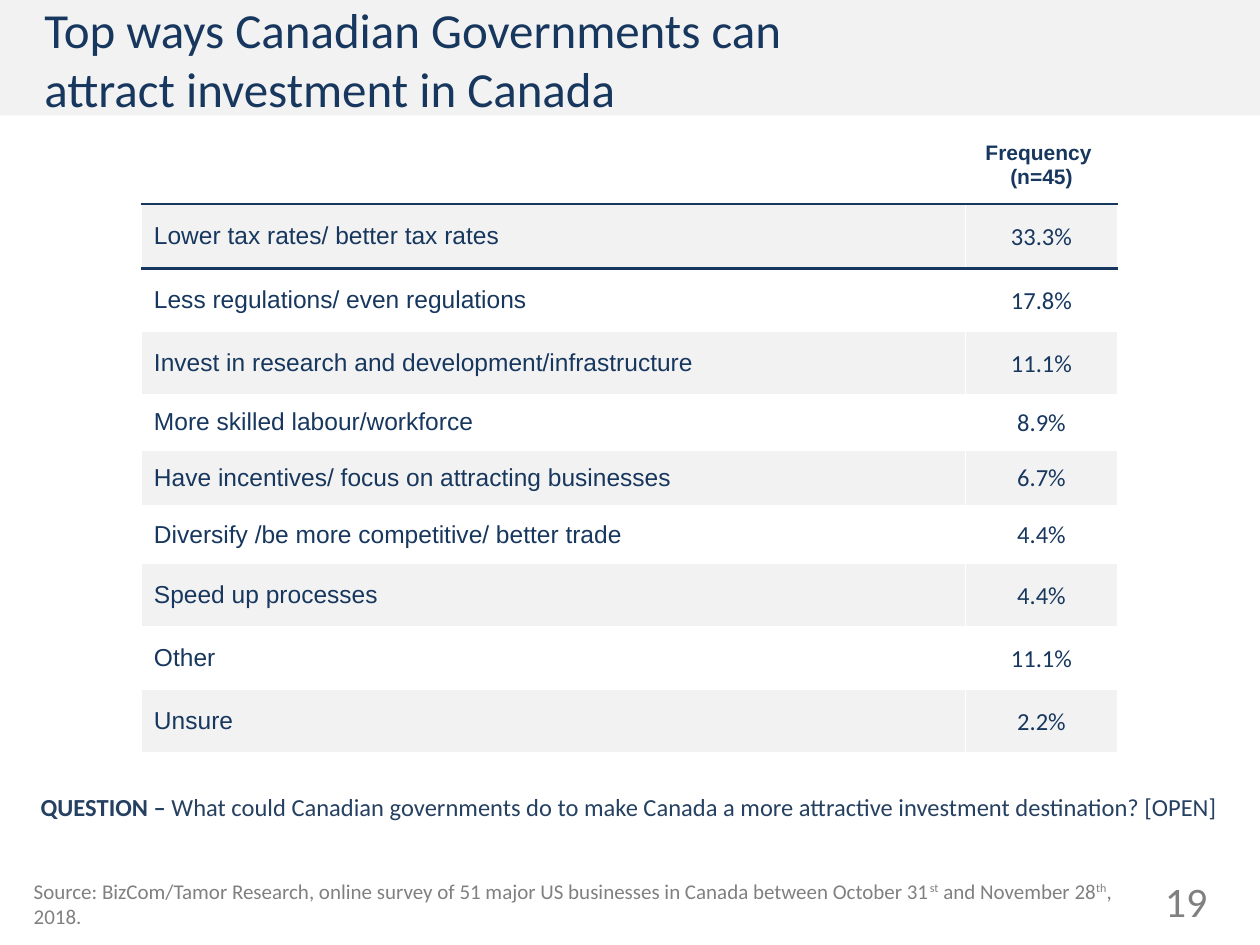
"""Build the survey slide on ways to attract investment in Canada."""
from lxml import etree
from pptx import Presentation
from pptx import util as u
from pptx.dml.color import RGBColor
from pptx.enum import shapes, text
from pptx.oxml.ns import qn

NAVY = RGBColor(0x17, 0x37, 0x5E)
BLUE = RGBColor(0x25, 0x40, 0x61)
GREY = RGBColor(0x80, 0x80, 0x80)
PALE = RGBColor(0xF2, 0xF2, 0xF2)
WHITE = RGBColor(0xFF, 0xFF, 0xFF)

LEFT, MID, RIGHT = text.PP_ALIGN.LEFT, text.PP_ALIGN.CENTER, text.PP_ALIGN.RIGHT
CENTER = text.MSO_ANCHOR.MIDDLE

HEAD = ["", "Frequency \n(n=45)"]
ROWS = [
    ("Lower tax rates/ better tax rates", "33.3%"),
    ("Less regulations/ even regulations", "17.8%"),
    ("Invest in research and development/infrastructure", "11.1%"),
    ("More skilled labour/workforce", "8.9%"),
    ("Have incentives/ focus on attracting businesses", "6.7%"),
    ("Diversify /be more competitive/ better trade", "4.4%"),
    ("Speed up processes", "4.4%"),
    ("Other", "11.1%"),
    ("Unsure", "2.2%"),
]
WIDTHS = [16.61, 3.07]
HEIGHTS = [1.57, 1.3, 1.27, 1.27, 1.12, 1.12, 1.17, 1.27, 1.27, 1.27]
RULES = {1: (NAVY, 1.5), 2: (NAVY, 2.25)}
THIN = (WHITE, 1)


class Deck:
    """Hold the style and the current slide."""

    def __init__(self):
        self.prs = Presentation()
        self.prs.slide_width, self.prs.slide_height = u.Cm(25.4), u.Cm(19.05)
        self.slide = self.prs.slides.add_slide(self.prs.slide_layouts[5])
        self.shapes = self.slide.shapes

    def style(self, par, size, color, face="Calibri", bold=None, align=LEFT):
        """Format one paragraph."""
        par.alignment = align
        font = par.font
        font.name, font.size, font.bold = face, u.Pt(size), bold
        font.color.rgb = color

    def band(self, x, y, w, h):
        """Draw a plain strip behind everything else."""
        box = self.shapes.add_shape(shapes.MSO_SHAPE.RECTANGLE, *map(u.Cm, (x, y, w, h)))
        box.shadow.inherit = False
        box.fill.solid()
        box.fill.fore_color.rgb = PALE
        box.line.fill.background()
        self.shapes._spTree.insert(2, box._element)

    def title(self, words, x, y, w, h):
        """Fill and place the title."""
        box = self.shapes.title
        box.left, box.top, box.width, box.height = map(u.Cm, (x, y, w, h))
        frame = box.text_frame
        frame.text = words
        frame.auto_size = text.MSO_AUTO_SIZE.NONE
        frame.vertical_anchor = CENTER
        self.style(frame.paragraphs[0], 28, NAVY)

    def note(self, parts, x, y, w, h, size, color, align=LEFT, anchor=None):
        """Add a line of (words, kind) runs, kind being bold, super or empty."""
        box = self.shapes.add_textbox(*map(u.Cm, (x, y, w, h)))
        frame = box.text_frame
        frame.word_wrap = True
        frame.vertical_anchor = anchor
        par = frame.paragraphs[0]
        self.style(par, size, color, align=align)
        for words, kind in parts:
            run = par.add_run()
            run.text = words
            if kind == "bold":
                run.font.bold = True
            elif kind == "super":
                run._r.get_or_add_rPr().set("baseline", "30000")
        return frame

    def edge(self, cell, side, color, width):
        """Draw one border of a cell."""
        line = etree.SubElement(cell._tc.get_or_add_tcPr(), qn("a:ln" + side), w=str(u.Pt(width)))
        fill = etree.SubElement(line, qn("a:solidFill"))
        etree.SubElement(fill, qn("a:srgbClr"), val=str(color))

    def cell(self, cell, words, row, col):
        """Fill and format one table cell."""
        cell.text = words
        cell.vertical_anchor = CENTER
        if row and col:
            cell.margin_left = cell.margin_right = cell.margin_top = u.Cm(0.03)
            cell.margin_bottom = 0
        for par in cell.text_frame.paragraphs:
            self.style(par, 14 if row else 12, NAVY, "Calibri" if row and col else "Arial",
                       not row, MID if col else LEFT)
        for side, rule in (("L", THIN), ("R", THIN), ("T", RULES.get(row, THIN)),
                           ("B", RULES.get(row + 1, THIN))):
            self.edge(cell, side, *rule)
        if row % 2:
            cell.fill.solid()
            cell.fill.fore_color.rgb = PALE
        else:
            cell.fill.background()

    def table(self, rows, x, y):
        """Add the table of answers."""
        size = map(u.Cm, (x, y, sum(WIDTHS), sum(HEIGHTS)))
        grid = self.shapes.add_table(len(rows), len(WIDTHS), *size).table
        grid.first_row = grid.horz_banding = False
        for col, w in zip(grid.columns, WIDTHS):
            col.width = u.Cm(w)
        for row, h in zip(grid.rows, HEIGHTS):
            row.height = u.Cm(h)
        for r, row in enumerate(rows):
            for c, words in enumerate(row):
                self.cell(grid.cell(r, c), words, r, c)


def main():
    deck = Deck()
    deck.band(0, 0, 25.4, 2.33)
    deck.title("Top ways Canadian Governments can attract investment in Canada",
               0.64, 0.02, 16.64, 2.31)
    deck.table([HEAD] + ROWS, 2.85, 2.54)
    ask = deck.note([("QUESTION – ", "bold"),
                     ("What could Canadian governments do to make Canada a more attractive "
                      "investment destination? [OPEN]", "")],
                    0.64, 15.87, 24.76, 0.79, 14, BLUE)
    ask.margin_left = ask.margin_right = u.Cm(0.18)
    ask.margin_top = ask.margin_bottom = u.Cm(0.1)
    deck.note([("Source: BizCom/Tamor Research, online survey of 51 major US businesses "
                "in Canada between October 31", ""), ("st", "super"),
               (" and November 28", ""), ("th", "super"), (", 2018.", "")],
              0.43, 17.58, 22.43, 1.02, 12, GREY)
    deck.note([("19", "")], 22.86, 17.65, 1.73, 1.02, 24, GREY, RIGHT, CENTER)
    deck.prs.save("out.pptx")


if __name__ == "__main__":
    main()
